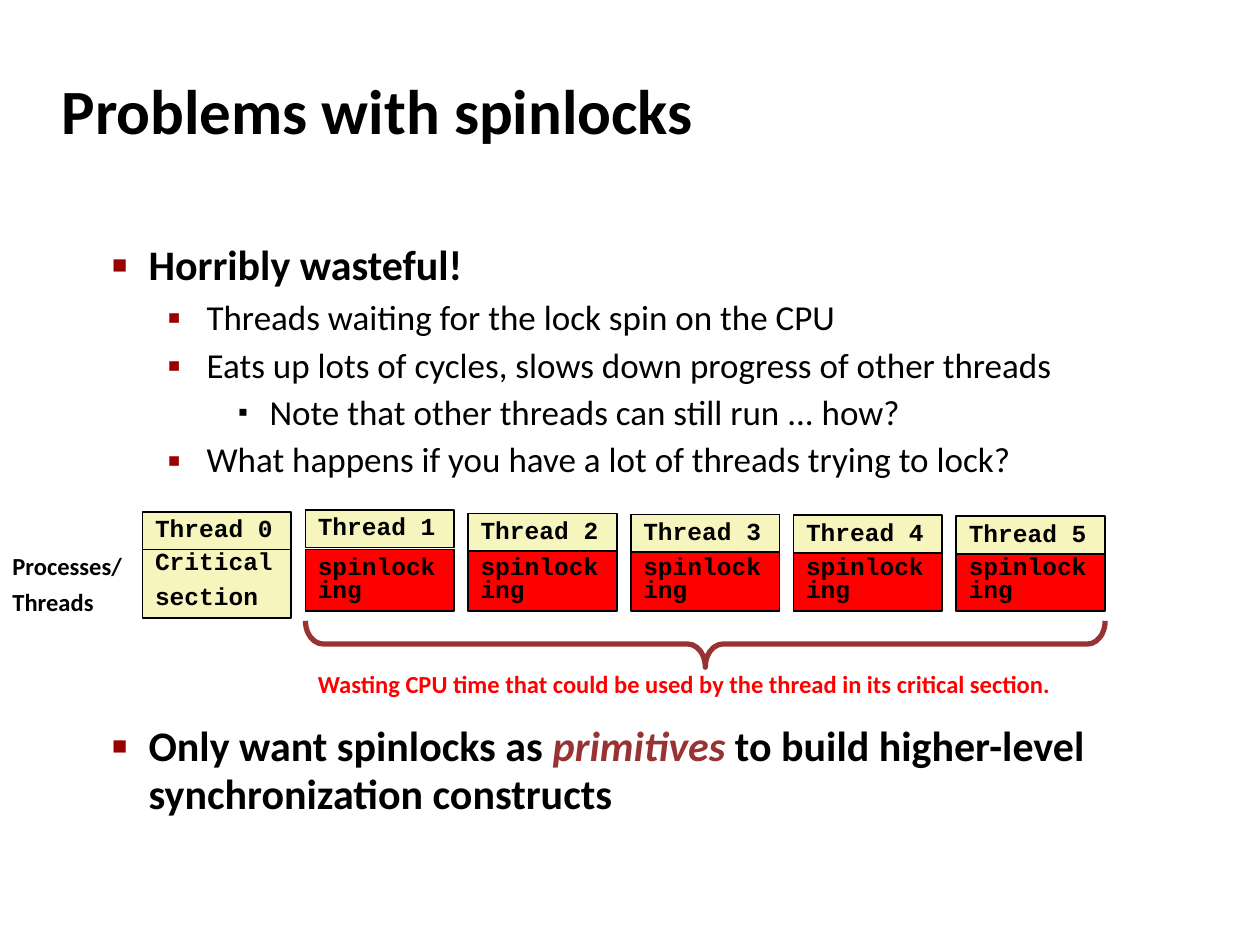
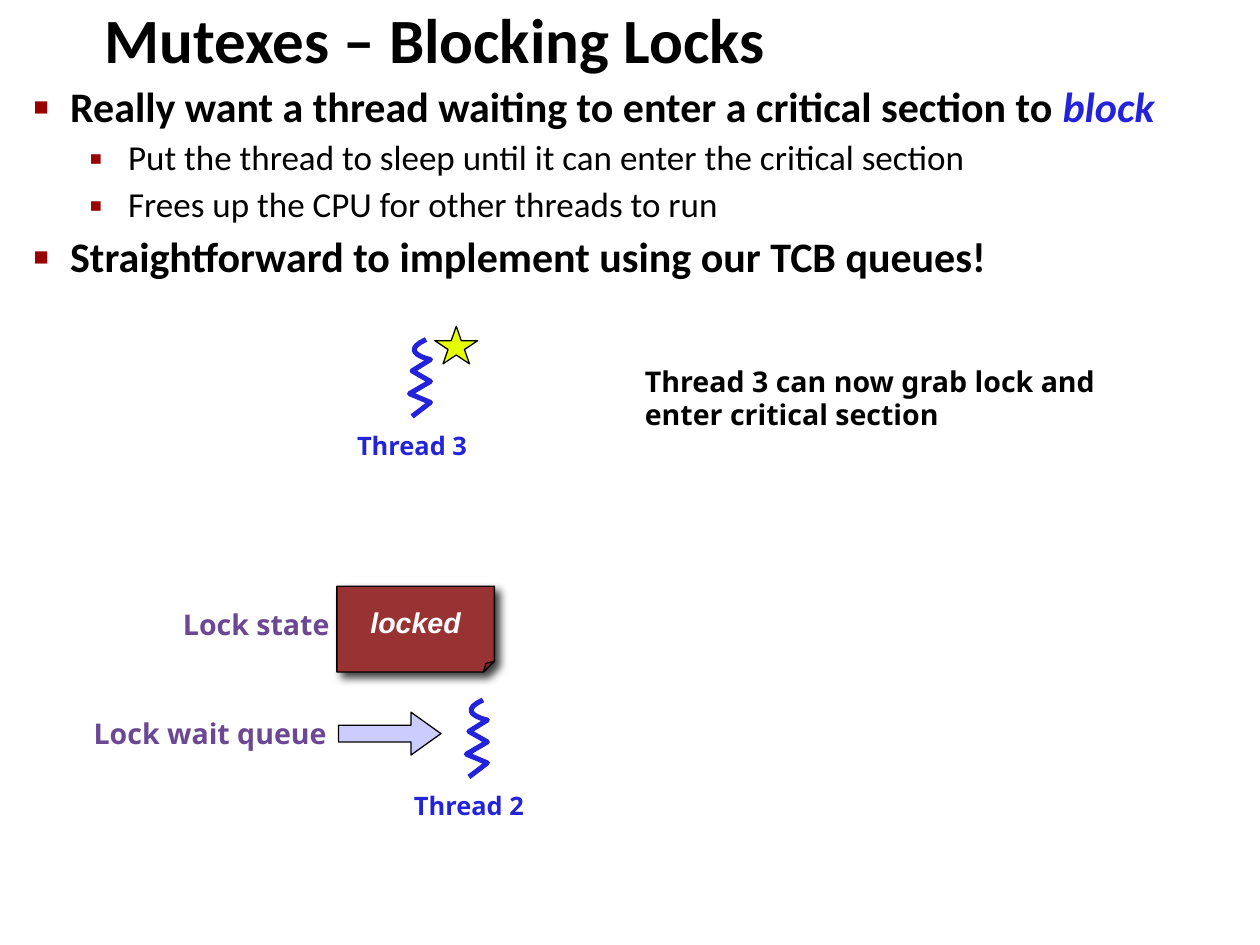
from lxml import etree
from pptx import Presentation
from pptx.dml.color import RGBColor
from pptx.enum.shapes import MSO_SHAPE
from pptx.enum.text import MSO_ANCHOR, MSO_AUTO_SIZE, PP_ALIGN
from pptx.oxml.ns import qn
from pptx.util import Pt

RECT, BRACE = MSO_SHAPE.RECTANGLE, MSO_SHAPE.RIGHT_BRACE
ARROW, STAR, NOTE = MSO_SHAPE.RIGHT_ARROW, MSO_SHAPE.STAR_5_POINT, MSO_SHAPE.FOLDED_CORNER
TOP, MID = MSO_ANCHOR.TOP, MSO_ANCHOR.MIDDLE
LEFT, CENTER = PP_ALIGN.LEFT, PP_ALIGN.CENTER
FIXED = MSO_AUTO_SIZE.NONE

BLACK, WHITE, RED = "000000", "FFFFFF", "FF0000"
MAROON, BLUE, PURPLE, CREAM, LILAC, LIME = "993333", "2323DC", "6B4794", "F6F5BD", "CCCCFF", "E6FF00"
SANS, MONO, NOTO = "Calibri", "Courier New", "Noto Sans"
INSET = (7.2, 3.6, 7.2, 3.6)
LEVELS = [
    dict(size=24, bold=True, left=20.9, hang=27.4, mark="■", tint="990000", scale=60),
    dict(size=20, bold=False, left=54, hang=22.3, mark="▪", tint="990000", scale=110),
    dict(size=20, bold=False, left=90, hang=18, mark="▪", tint=BLACK, scale=80),
]


def rgb(code):
    """Turn a hex string into a colour."""
    return RGBColor.from_string(code)


def node(parent, tag, **attrs):
    """Append a drawing element with attributes."""
    return etree.SubElement(parent, qn("a:" + tag), {k: str(v) for k, v in attrs.items()})


def write(par, runs, size=14, font=SANS, color=BLACK, bold=True, ital=False,
          align=LEFT, lead=0.95, gap=0):
    """Fill a paragraph with plain text or (text, accent colour) runs."""
    par.alignment, par.line_spacing, par.space_before = align, lead, Pt(gap)
    for words, accent in [(runs, None)] if isinstance(runs, str) else runs:
        run = par.add_run()
        run.text = words
        face = run.font
        face.name, face.size, face.bold = font, Pt(size), bold
        face.italic = bool(ital or accent)
        face.color.rgb = rgb(accent or color)


def fill(shape, lines, pad=INSET, wrap=True, anchor=MID, **form):
    """Write lines of text into a shape."""
    frame = shape.text_frame
    frame.word_wrap, frame.vertical_anchor, frame.auto_size = wrap, anchor, FIXED
    (frame.margin_left, frame.margin_top,
     frame.margin_right, frame.margin_bottom) = map(Pt, pad)
    for i, line in enumerate(lines):
        write(frame.add_paragraph() if i else frame.paragraphs[0], line, **form)


def label(shapes, box, lines, **form):
    """Add a text box."""
    fill(shapes.add_textbox(*map(Pt, box)), lines, **form)


def tag(shapes, box, lines, **form):
    """Add an unwrapped text box without margins."""
    label(shapes, box, lines, pad=(0,) * 4, wrap=False, anchor=TOP, font=NOTO, **form)


def ink(shape, paint, line, width):
    """Set fill and line and drop the shadow."""
    shape.shadow.inherit = False
    if paint:
        shape.fill.solid()
        shape.fill.fore_color.rgb = rgb(paint)
    else:
        shape.fill.background()
    shape.line.color.rgb, shape.line.width = rgb(line), Pt(width)


def draw(shapes, kind, box, paint=None, line=BLACK, width=0.75, adj=()):
    """Add a preset shape."""
    shape = shapes.add_shape(kind, *map(Pt, box))
    ink(shape, paint, line, width)
    for i, value in enumerate(adj):
        shape.adjustments[i] = value
    return shape


def move(shape, box):
    """Place a shape in a box."""
    shape.left, shape.top, shape.width, shape.height = map(Pt, box)


def head(slide, box, words):
    """Place and fill the title."""
    move(slide.shapes.title, box)
    fill(slide.shapes.title, [words], size=36)


def body(slide, box, items, gaps, pad=INSET, anchor=TOP):
    """Place the bullet list; items are (level, runs, extra gap)."""
    holder = slide.placeholders[1]
    move(holder, box)
    fill(holder, [], pad=pad, anchor=anchor)
    frame = holder.text_frame
    for i, (level, runs, extra) in enumerate(items):
        par = frame.add_paragraph() if i else frame.paragraphs[0]
        style = LEVELS[level]
        par.level = level
        write(par, runs, size=style["size"], bold=style["bold"], gap=gaps[level] + extra)
        prop = par._p.get_or_add_pPr()
        prop.set("marL", str(Pt(style["left"])))
        prop.set("indent", str(-Pt(style["hang"])))
        node(node(prop, "buClr"), "srgbClr", val=style["tint"])
        node(prop, "buSzPct", val=style["scale"] * 1000)
        node(prop, "buChar", char=style["mark"])


def lanes(slide, left, top):
    """Draw the row of threads with the brace below it."""
    shapes = slide.shapes
    code = dict(font=MONO, lead=0.8, gap=6.8)
    pitch, wide = 93, 85
    lifts = [1, 0, 2, 2.5, 3, 3.5]
    for i, lift in enumerate(lifts):
        x = left + i * pitch
        if i:
            state = draw(shapes, RECT, (x, top + 22.5, wide, 35), RED, width=1)
            fill(state, ["spinlocking"], **code)
        else:
            state = draw(shapes, RECT, (x, top + 19.5, wide, 42), CREAM, width=1)
            fill(state, ["Critical", "section"], **code)
        name = draw(shapes, RECT, (x, top + lift, wide, 21.5), CREAM, width=1)
        fill(name, [f"Thread {i}"], **code)
    note = dict(lead=0.8, gap=6.8)
    label(shapes, (left - 81.5, top + 22.5, 109.5, 42), ["Processes/", "Threads"], **note)
    span, deep = 457, 26.5
    start = left + pitch
    shift = (span - deep) / 2
    brace = draw(shapes, BRACE, (start + shift, top + 63.25 - shift, deep, span),
                 line=MAROON, width=3, adj=(0.38, 0.5))
    brace.rotation = 90
    label(shapes, (start, top + 90, 470, 21),
          ["Wasting CPU time that could be used by the thread in its critical section."],
          color=RED, **note)


def thread(slide, left, top, name):
    """Draw a squiggle with its name below."""
    shapes = slide.shapes.add_group_shape().shapes
    knots = [(16.5, 0), (0, 7.5), (19, 11.5), (19, 11.5)]
    steps = 12
    curve = []
    for i in range(steps + 1):
        t = i / steps
        parts = [(1 - t) ** 3, 3 * t * (1 - t) ** 2, 3 * t * t * (1 - t), t ** 3]
        curve.append([sum(p * k[axis] for p, k in zip(parts, knots)) for axis in (0, 1)])
    curve += [(8.5, 18), (19, 24), (7, 31), (19, 36), (8.5, 44)]
    spots = [(Pt(left + x), Pt(top + y)) for x, y in curve]
    pen = shapes.build_freeform(*spots[0])
    pen.add_line_segments(spots[1:], close=False)
    ink(pen.convert_to_shape(), None, BLUE, 2.9)
    tag(shapes, (left - 23, top + 53, 70, 34), [name], size=14.5, color=BLUE)


def lock(slide, left, top):
    """Draw the lock state note and its wait queue."""
    shapes = slide.shapes
    note = draw(shapes, NOTE, (left, top, 90, 49), MAROON)
    prop = note._element.spPr
    guides = prop.find(qn("a:prstGeom")).find(qn("a:avLst"))
    guides.clear()
    node(guides, "gd", name="adj", fmla="val 12500")
    fill(note, ["locked"], pad=(0,) * 4, wrap=False, size=16.3, font="Arial",
         color=WHITE, ital=True, align=CENTER)
    cast = node(prop.find(qn("a:effectLst")), "outerShdw",
                blurRad=Pt(5), dist=Pt(4.1), dir=45 * 60000)
    node(node(cast, "srgbClr", val=BLACK), "alpha", val=75000)
    tag(shapes, (left - 88, top + 13.5, 74, 19), ["Lock state"], size=16.3, color=PURPLE)
    tag(shapes, (left - 139, top + 75.5, 117.5, 19), ["Lock wait queue"], size=16.3, color=PURPLE)
    draw(shapes, ARROW, (left + 1, top + 72, 58.5, 24.5), LILAC, adj=(0.39, 0.7))
    thread(slide, left + 67, top + 65, "Thread 2")


def spin(slide):
    """Build the spinlock slide."""
    head(slide, (28, 34.5, 597.5, 60), "Problems with spinlocks")
    body(slide, (31, 107.5, 622, 391.5), [
        (0, "Horribly wasteful!", 0),
        (1, "Threads waiting for the lock spin on the CPU", 0),
        (1, "Eats up lots of cycles, slows down progress of other threads", 0),
        (2, "Note that other threads can still run ... how?", 0),
        (1, "What happens if you have a lot of threads trying to lock?", 0),
        (0, [("Only want spinlocks as ", None), ("primitives", MAROON),
             (" to build higher-level synchronization constructs", None)], 133),
    ], gaps=(5.4, 4.5, 4), pad=(33, 3.6, 7.2, 3.6), anchor=MID)
    lanes(slide, 81.5, 291.5)


def mutex(slide):
    """Build the blocking lock slide."""
    head(slide, (52.5, 5.5, 615, 37.5), "Mutexes – Blocking Locks")
    body(slide, (12, 44.5, 693.5, 442), [
        (0, [("Really want a thread waiting to enter a critical section to ", None),
             ("block", BLUE)], 0),
        (1, "Put the thread to sleep until it can enter the critical section", 0),
        (1, "Frees up the CPU for other threads to run", 0),
        (0, "Straightforward to implement using our TCB queues!", 0),
    ], gaps=(4.8, 4, 4))
    tag(slide.shapes, (368.5, 209.5, 232.5, 37),
        ["Thread 3 can now grab lock and", "enter critical section"], size=16.3)
    thread(slide, 227, 194, "Thread 3")
    draw(slide.shapes, STAR, (248.5, 186.5, 24.5, 21.5), LIME)
    lock(slide, 192.5, 335)


def main():
    """Build and save the slides."""
    deck = Presentation()
    deck.slide_width, deck.slide_height = Pt(720), Pt(540)
    for build in (spin, mutex):
        build(deck.slides.add_slide(deck.slide_layouts[1]))
    deck.save("out.pptx")


if __name__ == "__main__":
    main()
